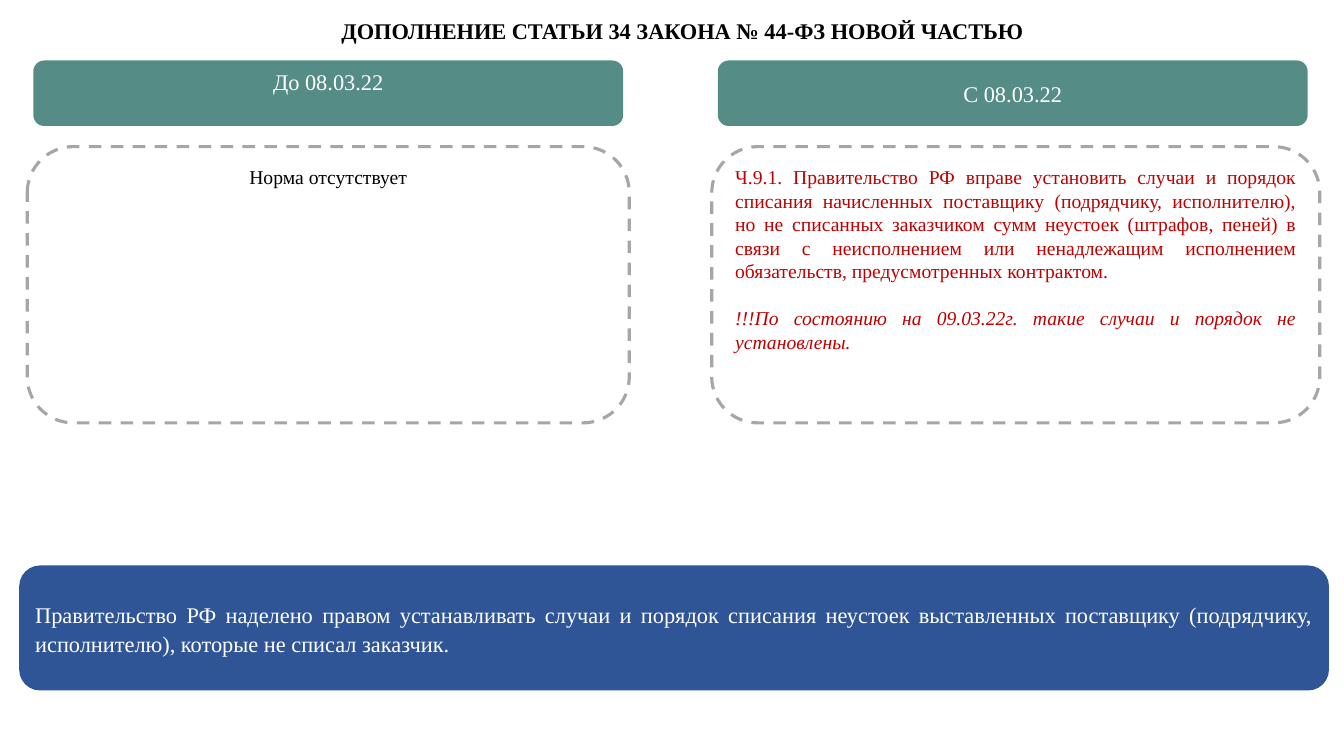
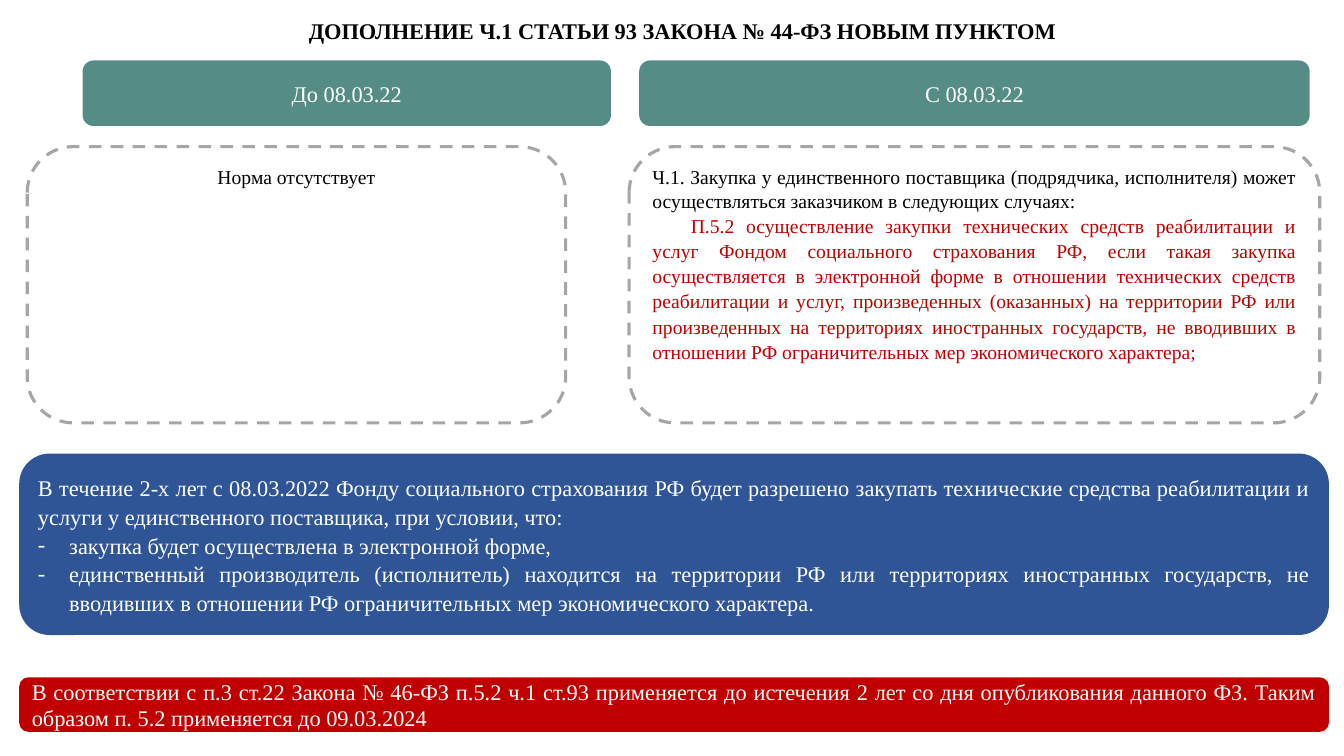
from dataclasses import dataclass

from lxml import etree
from pptx import Presentation
from pptx.dml.color import RGBColor
from pptx.enum.dml import MSO_LINE
from pptx.enum.shapes import MSO_SHAPE
from pptx.enum.text import MSO_ANCHOR, PP_ALIGN
from pptx.oxml.ns import qn
from pptx.util import Inches, Pt

ROUND = MSO_SHAPE.ROUNDED_RECTANGLE
DASH = MSO_LINE.DASH
TOP, MID, LOW = MSO_ANCHOR.TOP, MSO_ANCHOR.MIDDLE, MSO_ANCHOR.BOTTOM
CENTER, BLOCK = PP_ALIGN.CENTER, PP_ALIGN.JUSTIFY
WIDE, HIGH = Inches(13.33), Inches(7.5)


@dataclass(frozen=True)
class Theme:
    font: str = "Times New Roman"
    black: str = "000000"
    white: str = "FFFFFF"
    red: str = "C00000"
    teal: str = "568C86"
    blue: str = "2F5597"
    gray: str = "A6A6A6"
    large: int = 16
    small: int = 14
    edge: float = 2.25


@dataclass(frozen=True)
class Area:
    """Percent shares of the slide's width and height."""
    left: float
    top: float
    width: float
    height: float

    def frame(self) -> tuple[int, int, int, int]:
        return (int(WIDE * self.left / 100), int(HIGH * self.top / 100),
                int(WIDE * self.width / 100), int(HIGH * self.height / 100))


@dataclass(frozen=True)
class Para:
    text: str
    color: str
    size: int
    align: PP_ALIGN = BLOCK
    bold: bool = False
    slant: bool = False
    lines: float = 1.0
    before: float = 0
    margin: float = 0
    indent: float = 0
    bullet: str = ""


@dataclass(frozen=True)
class Column:
    head: str
    left: float
    width: float
    box_left: float
    box_right: float
    paras: tuple[Para, ...]
    anchor: MSO_ANCHOR = MID


@dataclass(frozen=True)
class Note:
    top: float
    height: float
    fill: str
    paras: tuple[Para, ...]


@dataclass(frozen=True)
class Page:
    title: str
    columns: tuple[Column, ...]
    notes: tuple[Note, ...]


LOOK = Theme()
TITLE = Area(2.7, 0.67, 96.17, 5.87)
HEAD_TOP, HEAD_HIGH = 8, 8.67
BOX_TOP, BOX_HIGH = 19.4, 36.53
BOX_LEFT, BOX_RIGHT = 2.03, 98.2
NOTE_LEFT, NOTE_WIDE = 1.43, 97.45
LOOSE = 1.07
HANG = 0.31
OLD, NEW = "До 08.03.22", "С 08.03.22"
NONE = (Para("Норма отсутствует", LOOK.black, LOOK.small, CENTER),)


def point(text: str) -> Para:
    return Para(text, LOOK.white, LOOK.large, lines=LOOSE,
                margin=HANG, indent=-HANG, bullet="-")


PAGES = (
    Page(
        "ДОПОЛНЕНИЕ СТАТЬИ 34 ЗАКОНА № 44-ФЗ НОВОЙ ЧАСТЬЮ",
        (
            Column(OLD, 2.48, 43.89, BOX_LEFT, 46.82, NONE, TOP),
            Column(NEW, 53.41, 43.89, 52.96, BOX_RIGHT, (
                Para("Ч.9.1. Правительство РФ вправе установить случаи и порядок "
                     "списания начисленных поставщику (подрядчику, исполнителю), "
                     "но не списанных заказчиком сумм неустоек (штрафов, пеней) в "
                     "связи с неисполнением или ненадлежащим исполнением "
                     "обязательств, предусмотренных контрактом.",
                     LOOK.red, LOOK.small),
                Para("!!!По состоянию на 09.03.22г. такие случаи и порядок не "
                     "установлены.", LOOK.red, LOOK.small, slant=True, before=16.8),
            )),
        ),
        (
            Note(74.8, 16.53, LOOK.blue, (
                Para("Правительство РФ наделено правом устанавливать случаи и "
                     "порядок списания неустоек выставленных поставщику "
                     "(подрядчику, исполнителю), которые не списал заказчик.",
                     LOOK.white, LOOK.large, lines=LOOSE),
            )),
        ),
    ),
    Page(
        "ДОПОЛНЕНИЕ Ч.1 СТАТЬИ 93 ЗАКОНА № 44-ФЗ НОВЫМ ПУНКТОМ",
        (
            Column(OLD, 6.15, 39.31, BOX_LEFT, 42.09, NONE),
            Column(NEW, 47.56, 49.89, 46.81, BOX_RIGHT, (
                Para("Ч.1. Закупка у единственного поставщика (подрядчика, "
                     "исполнителя) может осуществляться заказчиком в следующих "
                     "случаях:", LOOK.black, LOOK.small),
                Para("П.5.2 осуществление закупки технических средств реабилитации "
                     "и услуг Фондом социального страхования РФ, если такая закупка "
                     "осуществляется в электронной форме в отношении технических "
                     "средств реабилитации и услуг, произведенных (оказанных) на "
                     "территории РФ или произведенных на территориях иностранных "
                     "государств, не вводивших в отношении РФ ограничительных мер "
                     "экономического характера;",
                     LOOK.red, LOOK.small, lines=LOOSE, indent=0.38),
            )),
        ),
        (
            Note(60, 24, LOOK.blue, (
                Para("В течение 2-х лет с 08.03.2022 Фонду социального страхования "
                     "РФ будет разрешено закупать технические средства реабилитации "
                     "и услуги у единственного поставщика, при условии, что:",
                     LOOK.white, LOOK.large, lines=LOOSE),
                point("закупка будет осуществлена в электронной форме,"),
                point("единственный производитель (исполнитель) находится на "
                      "территории РФ или территориях иностранных государств, не "
                      "вводивших в отношении РФ ограничительных мер экономического "
                      "характера."),
            )),
            Note(89.6, 7.2, LOOK.red, (
                Para("В соответствии с п.3 ст.22 Закона № 46-ФЗ п.5.2 ч.1 ст.93 "
                     "применяется до истечения 2 лет со дня опубликования данного "
                     "ФЗ. Таким образом п. 5.2 применяется до 09.03.2024",
                     LOOK.white, LOOK.large),
            )),
        ),
    ),
)


def write(shape, paras: tuple[Para, ...], anchor: MSO_ANCHOR) -> None:
    frame = shape.text_frame
    frame.word_wrap = True
    frame.vertical_anchor = anchor
    for rank, para in enumerate(paras):
        line = frame.add_paragraph() if rank else frame.paragraphs[0]
        line.alignment = para.align
        line.line_spacing = para.lines
        line.space_before = Pt(para.before)
        props = line._p.get_or_add_pPr()
        props.set("marL", str(Inches(para.margin)))
        props.set("indent", str(Inches(para.indent)))
        if para.bullet:
            etree.SubElement(props, qn("a:buFont")).set("typeface", LOOK.font)
            etree.SubElement(props, qn("a:buChar")).set("char", para.bullet)
        run = line.add_run()
        run.text = para.text
        font = run.font
        font.name = LOOK.font
        font.size = Pt(para.size)
        font.bold = para.bold
        font.italic = para.slant
        font.color.rgb = RGBColor.from_string(para.color)


def panel(slide, area: Area, paras: tuple[Para, ...], anchor: MSO_ANCHOR,
          fill: str = "") -> None:
    shape = slide.shapes.add_shape(ROUND, *area.frame())
    shape.shadow.inherit = False
    if fill:
        shape.fill.solid()
        shape.fill.fore_color.rgb = RGBColor.from_string(fill)
        shape.line.fill.background()
    else:
        shape.fill.background()
        shape.line.color.rgb = RGBColor.from_string(LOOK.gray)
        shape.line.width = Pt(LOOK.edge)
        shape.line.dash_style = DASH
    write(shape, paras, anchor)


def draw(slide, page: Page) -> None:
    title = slide.shapes.add_textbox(*TITLE.frame())
    write(title, (Para(page.title, LOOK.black, LOOK.large, CENTER,
                       bold=True, lines=0.9),), LOW)
    for col in page.columns:
        box = Area(col.box_left, BOX_TOP, col.box_right - col.box_left, BOX_HIGH)
        panel(slide, box, col.paras, TOP)
        head = Area(col.left, HEAD_TOP, col.width, HEAD_HIGH)
        label = Para(col.head, LOOK.white, LOOK.large, CENTER)
        panel(slide, head, (label,), col.anchor, LOOK.teal)
    for note in page.notes:
        area = Area(NOTE_LEFT, note.top, NOTE_WIDE, note.height)
        panel(slide, area, note.paras, MID, note.fill)


def main() -> None:
    deck = Presentation()
    deck.slide_width, deck.slide_height = WIDE, HIGH
    blank = deck.slide_layouts[6]
    for page in PAGES:
        draw(deck.slides.add_slide(blank), page)
    deck.save("out.pptx")


if __name__ == "__main__":
    main()
